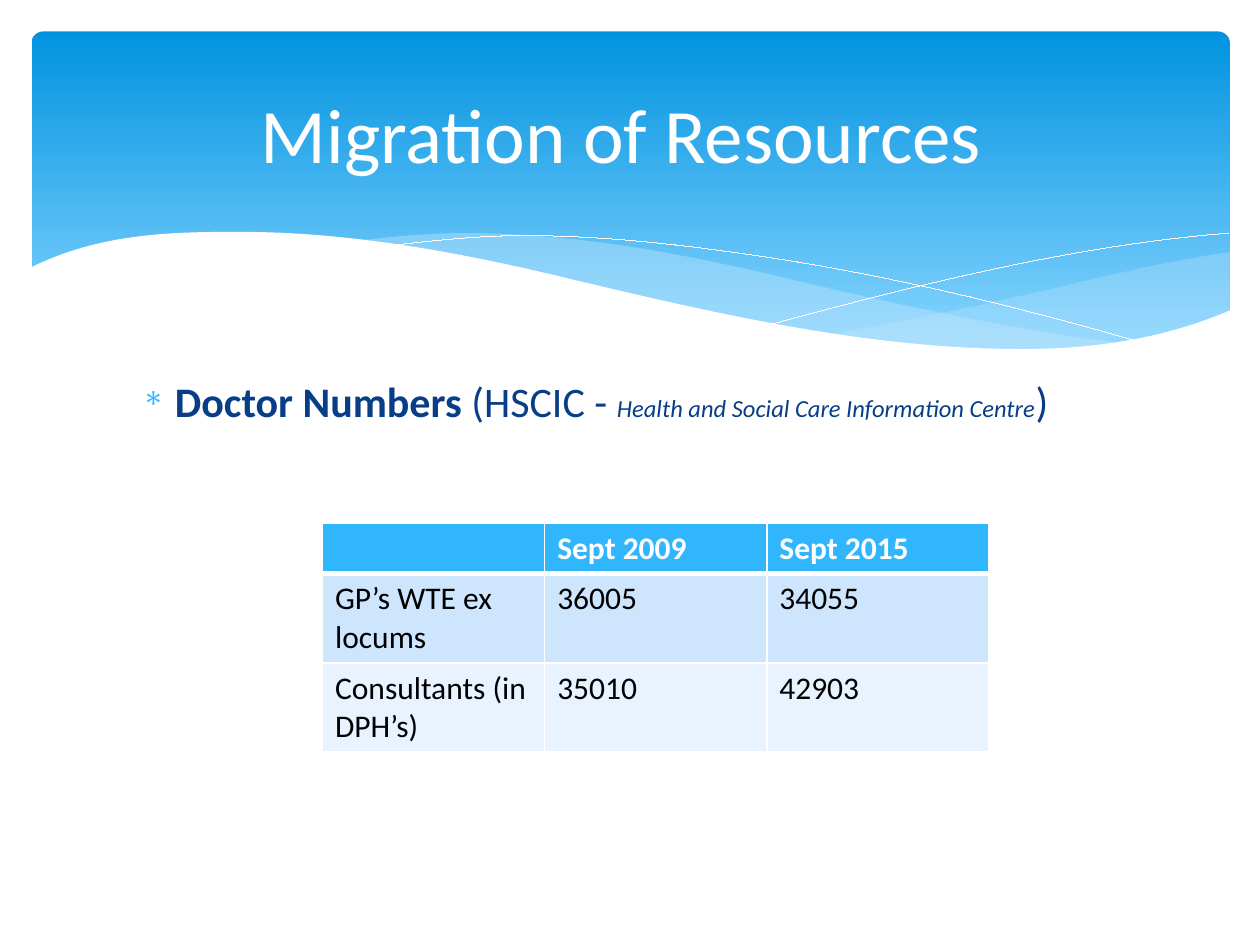
"""Build the Migration of Resources slide with its wave banner and table."""
from itertools import pairwise
from lxml.etree import SubElement as Sub
from pptx import Presentation
from pptx.dml.color import RGBColor as RGB
from pptx.enum.shapes import MSO_SHAPE as Shape
from pptx.enum.text import MSO_ANCHOR as Anchor, PP_ALIGN as Align
from pptx.oxml.ns import qn
from pptx.util import Inches, Pt

SKY, MIST, NAVY, WHITE, BLACK = "31B6FD", "C6E7FC", "073E87", "FFFFFF", "000000"
STEPS = 24


def paint(spot, tone):
    spot.solid()
    spot.fore_color.rgb = RGB.from_string(tone)


def curve(knots):
    """Return points on a smooth cubic through knots of x, y and slope."""
    spots = []
    for (x0, y0, m0), (x1, y1, m1) in pairwise(knots):
        span = x1 - x0
        for step in range(STEPS + 1):
            t = step / STEPS
            u = 1 - t
            y = (y0 * u * u * (1 + 2 * t) + y1 * t * t * (1 + 2 * u)
                 + span * t * u * (m0 * u - m1 * t))
            spots.append((Inches(x0 + span * t), Inches(y)))
    return spots


deck = Presentation()
deck.slide_width, deck.slide_height = Inches(10), Inches(7.5)
slide = deck.slides.add_slide(deck.slide_layouts[6])
shapes = slide.shapes

panel = shapes.add_shape(Shape.ROUNDED_RECTANGLE, Inches(0.25), Inches(0.25),
                         Inches(9.51), Inches(2.7))
panel.adjustments[0] = 0.034
panel.shadow.inherit = False
panel.line.fill.background()
panel.fill.gradient()
panel.fill.gradient_angle = 270
for stop, place, tone in zip(panel.fill.gradient_stops, (0, 0.9), ("0293E0", "83D3FE")):
    stop.position = place
    stop.color.rgb = RGB.from_string(tone)

right = {"top": [(6.61, 2.65, -0.18), (8.61, 2.23, -0.24), (9.76, 2, -0.15)],
         "low": [(6.61, 2.65, 0.14), (8.14, 2.78, 0), (9.76, 2.47, -0.4)],
         "tone": MIST, "alpha": 29}
middle = {"top": [(2.86, 1.91, -0.13), (3.7, 1.85, 0), (6.29, 2.22, 0.24),
                  (8.93, 2.73, 0.13)],
          "low": [(2.86, 1.91, 0.14), (4.49, 2.22, 0.25), (8.18, 2.78, 0),
                  (8.93, 2.73, -0.12)],
          "tone": MIST, "alpha": 40}
fall = {"top": [(3.09, 1.95, -0.12), (4.16, 1.87, 0), (6.08, 2.04, 0.15),
                (9.07, 2.72, 0.29)]}
rise = {"top": [(6.13, 2.57, -0.27), (9.75, 1.85, -0.08)]}
base = {"top": [(0.23, 2.13, -0.5), (1.9, 1.84, 0), (4.47, 2.2, 0.24),
                (8.1, 2.77, 0), (9.77, 2.46, -0.43)],
        "low": [(0.23, 3.29, 0), (9.77, 3.29, 0)],
        "tone": WHITE, "alpha": 100}

for wave in (right, middle, fall, rise, base):
    solid = "low" in wave
    spots = curve(wave["top"])
    if solid:
        spots += reversed(curve(wave["low"]))
    pen = shapes.build_freeform(*spots[0])
    pen.add_line_segments(spots[1:], close=solid)
    form = pen.convert_to_shape()
    form.shadow.inherit = False
    if solid:
        paint(form.fill, wave["tone"])
        form.line.fill.background()
        tint = form.fill._xPr.find(qn("a:solidFill"))[0]
        Sub(tint, qn("a:alpha"), val=str(wave["alpha"] * 1000))
    else:
        form.fill.background()
        paint(form.line.fill, WHITE)
        form.line.width = Pt(0.01)

texts = []

title = shapes.add_textbox(Inches(0.5), Inches(0.37), Inches(9), Inches(1.37)).text_frame
title.word_wrap = True
title.vertical_anchor = Anchor.MIDDLE
head = title.paragraphs[0]
head.alignment = Align.CENTER
texts.append((head, "Migration of Resources ", WHITE, {"size": Pt(44)}))

rows = [("", "Sept 2009", "Sept 2015"),
        ("GP’s WTE ex locums", "36005", "34055"),
        ("Consultants (in DPH’s)", "35010", "42903")]
fills = [SKY, "CEE5FE", "E8F3FF"]
highs = [0.4, 0.71, 0.71]
wide = 5.29
table = shapes.add_table(len(rows), len(rows[0]), Inches(2.56), Inches(4.15),
                         Inches(wide), Inches(sum(highs))).table
for col in table.columns:
    col.width = Inches(wide / len(rows[0]))
for i, row in enumerate(rows):
    table.rows[i].height = Inches(highs[i])
    for j, text in enumerate(row):
        cell = table.cell(i, j)
        props = cell._tc.get_or_add_tcPr()
        for side in "LRTB":
            thick = 3 if (i, side) in ((0, "B"), (1, "T")) else 1
            edge = Sub(props, qn("a:ln" + side), w=str(Pt(thick)))
            Sub(Sub(edge, qn("a:solidFill")), qn("a:srgbClr"), val=WHITE)
        paint(cell.fill, fills[i])
        if text:
            looks = {"size": Pt(18), "bold": i == 0}
            texts.append((cell.text_frame.paragraphs[0], text,
                          BLACK if i else WHITE, looks))

body = shapes.add_textbox(Inches(0.95), Inches(2.93), Inches(8.1), Inches(3.77)).text_frame
body.word_wrap = True
item = body.paragraphs[0]
props = item._p.get_or_add_pPr()
for key, val in {"marL": 0.34, "indent": -0.26}.items():
    props.set(key, str(Inches(val)))
Sub(Sub(props, qn("a:spcBef")), qn("a:spcPct"), val="20000")
Sub(Sub(props, qn("a:buClr")), qn("a:srgbClr"), val=SKY)
Sub(props, qn("a:buSzPct"), val="75000")
Sub(props, qn("a:buChar"), char="∗")
large = {"size": Pt(24)}
texts += [(item, "Doctor Numbers ", NAVY, {**large, "bold": True}),
          (item, "(HSCIC - ", NAVY, large),
          (item, "Health and Social Care Information Centre", NAVY,
           {"size": Pt(14), "italic": True}),
          (item, ")", NAVY, large)]

for para, text, tone, looks in texts:
    run = para.add_run()
    run.text = text
    for key, val in {"name": "Calibri", **looks}.items():
        setattr(run.font, key, val)
    paint(run.font.fill, tone)

deck.save("out.pptx")
